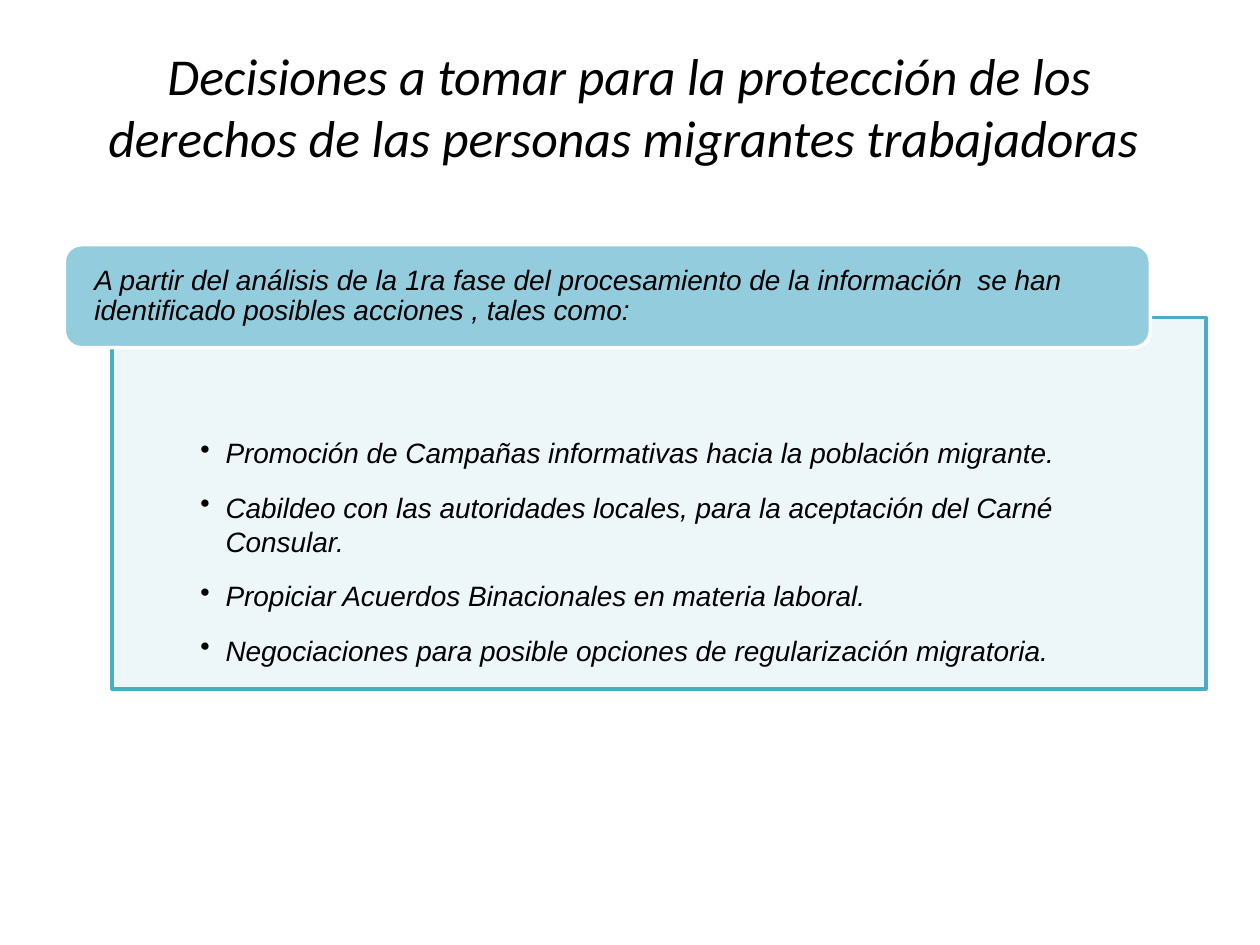
from lxml import etree
from pptx import Presentation
from pptx.dml.color import RGBColor
from pptx.enum.shapes import MSO_SHAPE
from pptx.enum.text import MSO_ANCHOR, PP_ALIGN
from pptx.oxml.ns import qn
from pptx.util import Inches, Pt

RECTANGLE, ROUNDED = MSO_SHAPE.RECTANGLE, MSO_SHAPE.ROUNDED_RECTANGLE
TOP, MIDDLE = MSO_ANCHOR.TOP, MSO_ANCHOR.MIDDLE
LEFT, CENTER = PP_ALIGN.LEFT, PP_ALIGN.CENTER
WIDTH, HEIGHT = Inches(10), Inches(7.5)

TITLE = ("Decisiones a tomar para la protección de los derechos "
         "de las personas migrantes trabajadoras ")
INTRODUCTION = ("A partir del análisis de la 1ra fase del procesamiento de la información  "
                "se han identificado posibles acciones , tales como:")
ACTIONS = [
    "Promoción de Campañas informativas hacia la población migrante.",
    "Cabildeo con las autoridades locales, para la aceptación del Carné Consular.",
    "Propiciar Acuerdos Binacionales en materia laboral.",
    "Negociaciones para posible opciones de regularización migratoria.",
]


def color(value):
    return RGBColor.from_string(value)


class SlideBuilder:
    """Holds the style and the current slide; places are shares of the slide."""
    text_color = "000000"
    body_font, body_size = "Arial", 16
    title_font, title_size = "Calibri", 29.6

    def __init__(self, presentation):
        self.slide = presentation.slides.add_slide(presentation.slide_layouts[6])

    def place(self, left, top, width, height):
        return (round(left * WIDTH), round(top * HEIGHT),
                round(width * WIDTH), round(height * HEIGHT))

    def panel(self, kind, area, fill, line, opacity=100):
        shape = self.slide.shapes.add_shape(kind, *self.place(*area))
        shape.shadow.inherit = False
        shape.fill.solid()
        shape.fill.fore_color.rgb = color(fill)
        if opacity < 100:
            fill_color = shape._element.spPr.find(qn("a:solidFill"))[0]
            etree.SubElement(fill_color, qn("a:alpha"), val=str(opacity * 1000))
        shape.line.color.rgb = color(line)
        shape.line.width = Pt(2)
        return shape

    def add_text(self, shape, texts, insets, anchor=TOP, align=LEFT, font=body_font,
                 size=body_size, after=0, spacing=1.0, bulleted=False):
        frame = shape.text_frame
        frame.word_wrap = True
        frame.vertical_anchor = anchor
        (frame.margin_left, frame.margin_top,
         frame.margin_right, frame.margin_bottom) = map(Inches, insets)
        frame.text = "\n".join(texts)
        for paragraph in frame.paragraphs:
            paragraph.alignment = align
            paragraph.line_spacing = spacing
            paragraph.space_after = Pt(after)
            if bulleted:
                self.bullet(paragraph)
            paragraph.font.name = font
            paragraph.font.size = Pt(size)
            paragraph.font.italic = True
            paragraph.font.color.rgb = color(self.text_color)

    def bullet(self, paragraph):
        properties = paragraph._p.get_or_add_pPr()
        properties.set("marL", str(Inches(0.2)))
        properties.set("indent", str(-Inches(0.2)))
        etree.SubElement(properties, qn("a:buChar"), char="•")

    def title(self, area, text):
        box = self.slide.shapes.add_textbox(*self.place(*area))
        self.add_text(box, [text], (0.1, 0.05, 0.1, 0.05), align=CENTER,
                      font=self.title_font, size=self.title_size)


def main():
    presentation = Presentation()
    presentation.slide_width, presentation.slide_height = WIDTH, HEIGHT
    builder = SlideBuilder(presentation)

    # Framed list of actions
    actions = builder.panel(RECTANGLE, (0.089, 0.336, 0.868, 0.393),
                            "DBEEF4", "4BACC6", opacity=49)
    builder.add_text(actions, ACTIONS, (0.7, 0.94, 0.7, 0.12), after=12, bulleted=True)

    # Introduction overlapping the top of the frame
    introduction = builder.panel(ROUNDED, (0.051, 0.259, 0.862, 0.109),
                                 "93CDDD", "FFFFFF")
    builder.add_text(introduction, [INTRODUCTION], (0.2, 0, 0.2, 0),
                     anchor=MIDDLE, spacing=0.9)

    # Slide title
    builder.title((0.05, 0.04, 0.9, 0.167), TITLE)

    presentation.save("out.pptx")


if __name__ == "__main__":
    main()
